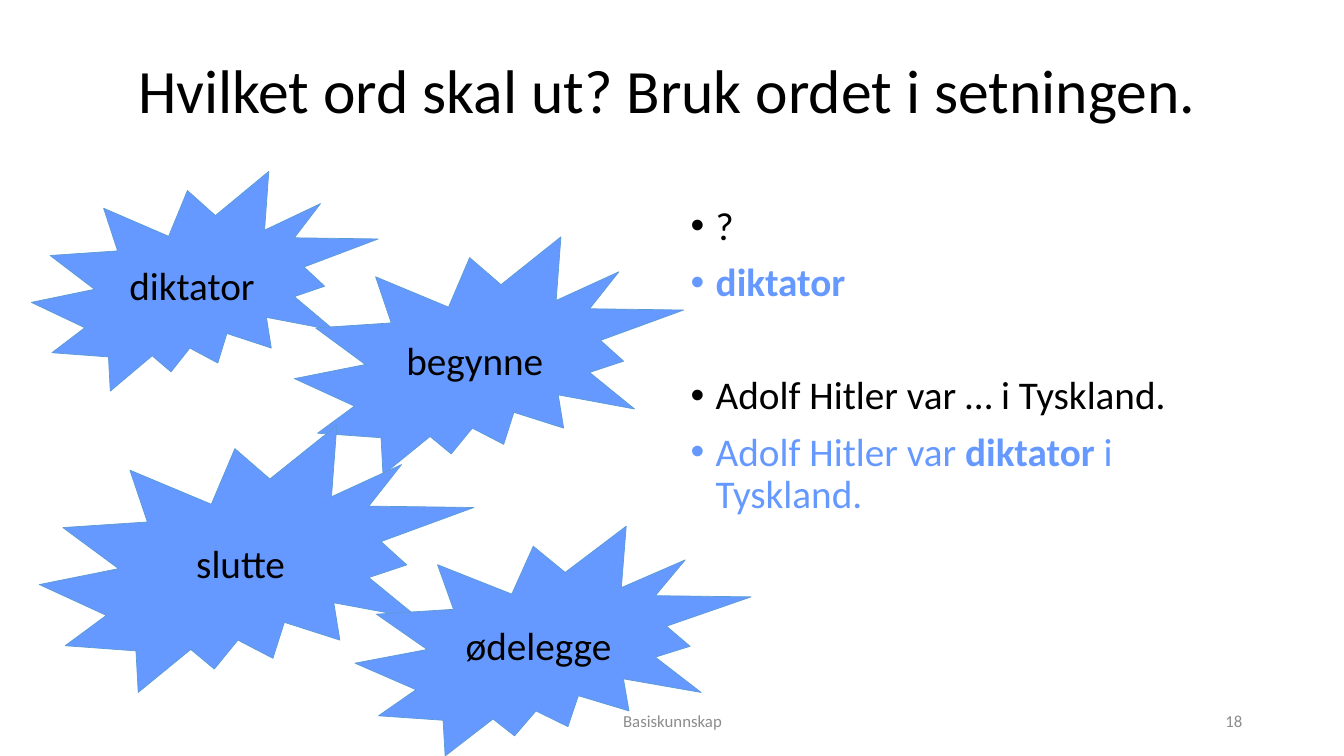
from lxml.etree import SubElement
from pptx import Presentation
from pptx.dml.color import RGBColor
from pptx.enum.shapes import MSO_SHAPE as Shape
from pptx.enum.text import MSO_ANCHOR as Anchor, PP_ALIGN as Align
from pptx.oxml.ns import qn
from pptx.util import Inches, Pt

BLACK, BLUE, EDGE, GREY = "000000", "6699FF", "5B9BD5", "8C8C8C"
FONT = "Calibri"

# Boxes: left, top, width and height in percent of the slide
TITLE = ("Hvilket ord skal ut? Bruk ordet i setningen.", (9.53, 2.67, 86.27, 19.33))
FOOTERS = [
    ("Basiskunnskap", (33.16, 92.67, 33.76, 5.33), Align.CENTER),
    ("18", (70.67, 92.67, 22.51, 5.33), Align.RIGHT),
]
WORDS = [
    ("diktator", (2.33, 22.67, 25.81, 29.07)),
    ("begynne", (21.91, 31.33, 28.96, 31.47)),
    ("slutte", (2.93, 56.27, 32.33, 35.33)),
    ("ødelegge", (26.41, 69.6, 29.48, 30.4)),
]
BODY_BOX = (50.64, 26.67, 42.54, 63.47)
BODY = [
    (BLACK, 10, [("?", False)]),
    (BLUE, 10, [("diktator", True)]),
    (BLACK, 50.5, [("Adolf Hitler var … i Tyskland.", False)]),
    (BLUE, 10, [("Adolf Hitler var ", False), ("diktator ", True), ("i Tyskland.", False)]),
]

prs = Presentation()
prs.slide_width, prs.slide_height = Inches(13.33), Inches(7.5)
slide = prs.slides.add_slide(prs.slide_layouts[6])


def rgb(color):
    return RGBColor.from_string(color)


def place(box):
    sides = (prs.slide_width, prs.slide_height) * 2
    return [int(side * share / 100) for side, share in zip(sides, box)]


def set_all(target, values):
    for name, value in values.items():
        setattr(target, name, value)


def add_run(p, text, size, color, bold=False):
    r = p.add_run()
    r.text = text
    set_all(r.font, {"name": FONT, "size": Pt(size), "bold": bold})
    r.font.color.rgb = rgb(color)


def add_line(s, text, size, color, **layout):
    set_all(s.text_frame, {"word_wrap": True, "vertical_anchor": Anchor.MIDDLE})
    p = s.text_frame.paragraphs[0]
    set_all(p, layout)
    add_run(p, text, size, color)


def add_bullet(p):
    pPr = p._p.get_or_add_pPr()
    set_all_indent = {"marL": Inches(0.25), "indent": -Inches(0.25)}
    for name, value in set_all_indent.items():
        pPr.set(name, str(value))
    SubElement(pPr, qn("a:buFont")).set("typeface", "Arial")
    SubElement(pPr, qn("a:buChar")).set("char", "•")


text, box = TITLE
add_line(slide.shapes.add_textbox(*place(box)), text, 44, BLACK, line_spacing=0.9)

tf = slide.shapes.add_textbox(*place(BODY_BOX)).text_frame
tf.word_wrap = True
for i, (color, gap, runs) in enumerate(BODY):
    p = tf.add_paragraph() if i else tf.paragraphs[0]
    set_all(p, {"line_spacing": 0.9, "space_before": Pt(gap)})
    add_bullet(p)
    for text, bold in runs:
        add_run(p, text, 28, color, bold)

for text, box in WORDS:
    s = slide.shapes.add_shape(Shape.EXPLOSION2, *place(box))
    s.shadow.inherit = False
    s.fill.solid()
    s.fill.fore_color.rgb = rgb(BLUE)
    s.line.color.rgb = rgb(EDGE)
    s.line.width = Pt(0.5)
    add_line(s, text, 28, BLACK, alignment=Align.CENTER)

for text, box, align in FOOTERS:
    add_line(slide.shapes.add_textbox(*place(box)), text, 12, GREY, alignment=align)

prs.save("out.pptx")
